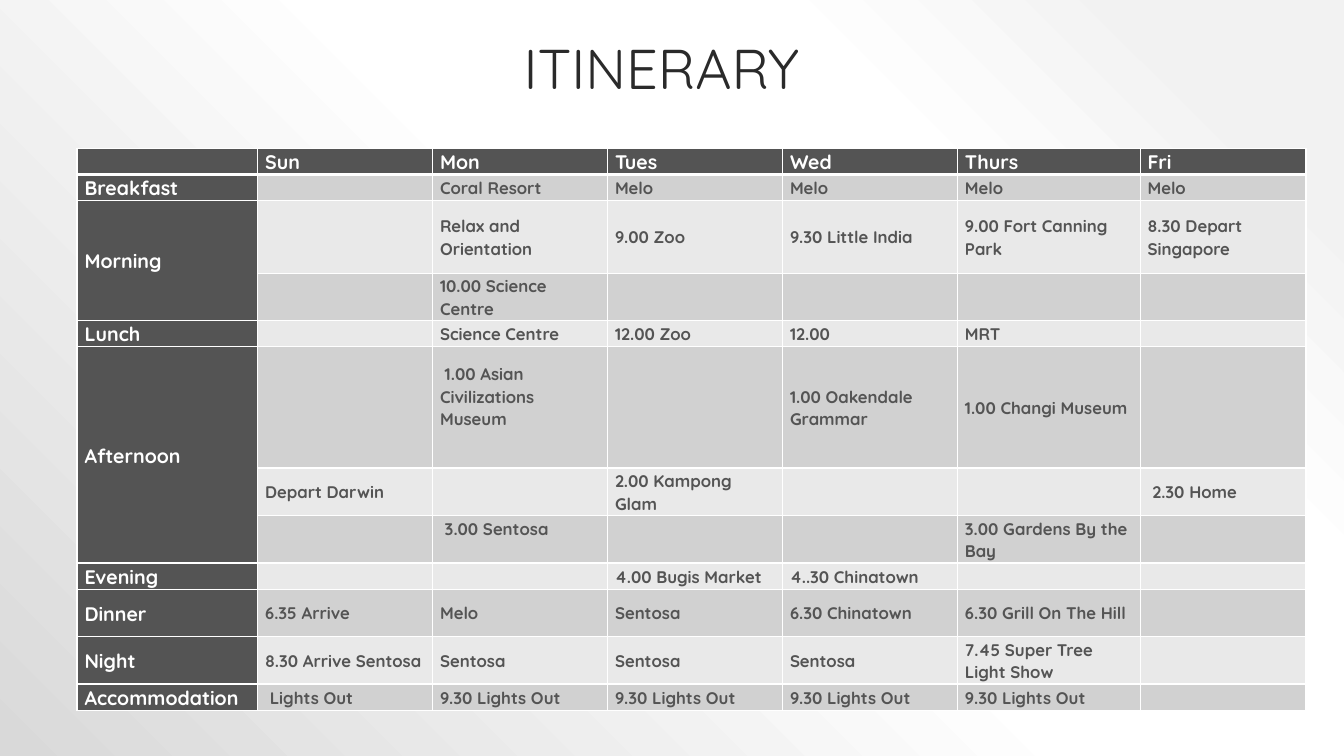
from lxml import etree
from pptx import Presentation
from pptx.dml.color import RGBColor
from pptx.enum.text import MSO_ANCHOR, PP_ALIGN
from pptx.oxml import parse_xml
from pptx.oxml.ns import nsdecls, qn
from pptx.util import Pt

FONT = "Quicksand"
DARK, WHITE = "545454", "FFFFFF"
BANDS = ["E9E9E9", "D1D1D1"]
BACKGROUND_STOPS = [(10, "F2F2F2"), (28, "FFFFFF"), (48, "FFFFFF"), (100, "D9D9D9")]
COLUMN_WIDTHS = [129, 125, 125, 125, 125, 130.5, 118.5]
ROW_HEIGHTS = [18.7, 18.7, 51.8, 33.9, 18.7, 86.6, 33.9, 33.9, 18.7, 33.9, 33.9, 18.7]
ITINERARY = [
    ["", "Sun", "Mon", "Tues", "Wed", "Thurs", "Fri"],
    ["Breakfast", "", "Coral Resort", "Melo", "Melo", "Melo", "Melo"],
    ["Morning", "", "Relax and Orientation", "9.00 Zoo", "9.30 Little India",
     "9.00 Fort Canning Park", "8.30 Depart Singapore"],
    ["", "", "10.00 Science Centre", "", "", "", ""],
    ["Lunch", "", "Science Centre", "12.00 Zoo", "12.00", "MRT", ""],
    ["Afternoon", "", " 1.00 Asian Civilizations Museum", "", "1.00 Oakendale Grammar",
     "1.00 Changi Museum", ""],
    ["", "Depart Darwin", "", "2.00 Kampong Glam", "", "", " 2.30 Home"],
    ["", "", " 3.00 Sentosa", "", "", "3.00 Gardens By the Bay", ""],
    ["Evening", "", "", "4.00 Bugis Market", "4..30 Chinatown", "", ""],
    ["Dinner", "6.35 Arrive", "Melo", "Sentosa", "6.30 Chinatown", "6.30 Grill On The Hill", ""],
    ["Night", "8.30 Arrive Sentosa", "Sentosa", "Sentosa", "Sentosa",
     "7.45 Super Tree Light Show", ""],
    ["Accommodation", " Lights Out"] + ["9.30 Lights Out"] * 4 + [""],
]
RAISED_CELLS = [(5, 2), (7, 2)]


def add_text(paragraph, text, size, color, bold):
    run = paragraph.add_run()
    run.text = text
    run.font.name = FONT
    run.font.size = Pt(size)
    run.font.bold = bold
    run.font.color.rgb = RGBColor.from_string(color)


def add_borders(cell, bottom_width):
    """Draw white lines round a cell; call before the cell is filled."""
    properties = cell._tc.get_or_add_tcPr()
    for side, width in [("L", 1), ("R", 1), ("T", 1), ("B", bottom_width)]:
        line = etree.SubElement(properties, qn(f"a:ln{side}"), w=str(Pt(width)))
        fill = etree.SubElement(line, qn("a:solidFill"))
        etree.SubElement(fill, qn("a:srgbClr"), val=WHITE)


presentation = Presentation()
presentation.slide_width, presentation.slide_height = Pt(960), Pt(540)
slide = presentation.slides.add_slide(presentation.slide_layouts[5])

# Background: circular gradient spreading from the top right corner
slide.background.fill.gradient()
stops = "".join(
    f'<a:gs pos="{position * 1000}"><a:srgbClr val="{color}"/></a:gs>'
    for position, color in BACKGROUND_STOPS
)
gradient = parse_xml(
    f'<a:gradFill {nsdecls("a")} rotWithShape="1"><a:gsLst>{stops}</a:gsLst>'
    '<a:path path="circle"><a:fillToRect l="100000" b="100000"/></a:path></a:gradFill>'
)
plain_gradient = next(slide._element.iter(qn("a:gradFill")))
plain_gradient.getparent().replace(plain_gradient, gradient)

# Title
title = slide.shapes.title
title.left, title.top, title.width, title.height = Pt(88.5), Pt(9.5), Pt(768), Pt(67)
title.text_frame.vertical_anchor = MSO_ANCHOR.BOTTOM
heading = title.text_frame.paragraphs[0]
heading.alignment = PP_ALIGN.CENTER
heading.line_spacing = 0.9
add_text(heading, "ITINERARY", 40, "2A2A2A", False)

# Timetable
timetable = slide.shapes.add_table(
    len(ROW_HEIGHTS), len(COLUMN_WIDTHS), Pt(55), Pt(105.8),
    Pt(sum(COLUMN_WIDTHS)), Pt(sum(ROW_HEIGHTS)),
).table
for column, width in zip(timetable.columns, COLUMN_WIDTHS):
    column.width = Pt(width)
for row, height in zip(timetable.rows, ROW_HEIGHTS):
    row.height = Pt(height)

for r, entries in enumerate(ITINERARY):
    for c, entry in enumerate(entries):
        cell = timetable.cell(r, c)
        is_header = r == 0 or c == 0
        size = 14 if is_header else 12
        add_borders(cell, 3 if r == 0 else 1)
        cell.fill.solid()
        cell.fill.fore_color.rgb = RGBColor.from_string(DARK if is_header else BANDS[r % 2])
        cell.margin_left = cell.margin_right = Pt(5.4)
        cell.margin_top = 0
        cell.margin_bottom = Pt(16) if (r, c) in RAISED_CELLS else 0
        cell.vertical_anchor = MSO_ANCHOR.BOTTOM if r == 0 else MSO_ANCHOR.MIDDLE
        paragraph = cell.text_frame.paragraphs[0]
        paragraph.line_spacing = 1.07
        if entry:
            add_text(paragraph, entry, size, WHITE if is_header else DARK, True)
        else:
            etree.SubElement(paragraph._p, qn("a:endParaRPr"), sz=str(size * 100))

for first, last in [(2, 3), (5, 7)]:
    timetable.cell(first, 0).merge(timetable.cell(last, 0))

presentation.save("out.pptx")
